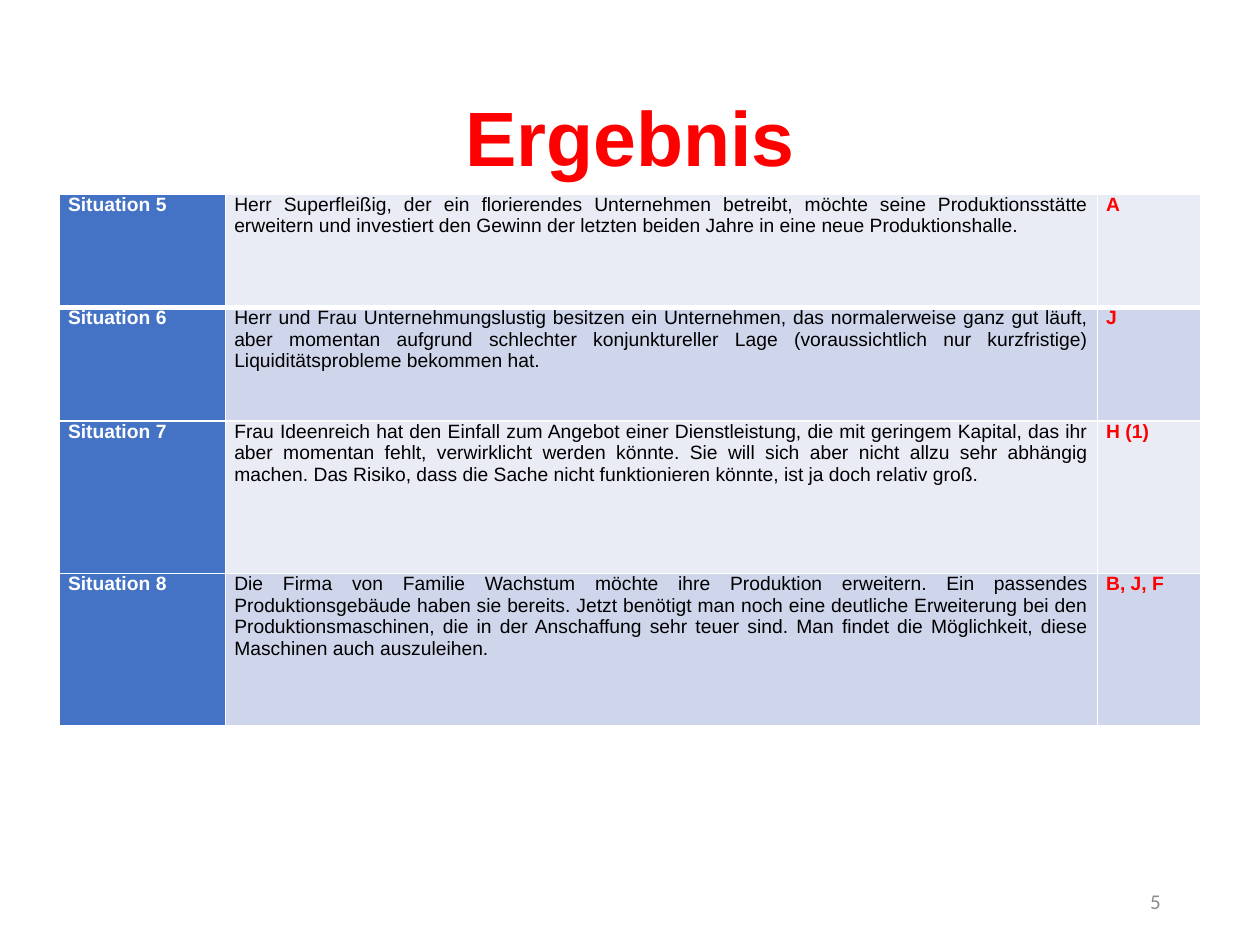
from pptx import Presentation
from pptx.dml.color import RGBColor
from pptx.enum.text import MSO_ANCHOR, PP_ALIGN
from pptx.oxml.ns import qn
from pptx.util import Inches, Pt
from lxml.etree import SubElement

RED = RGBColor(0xFF, 0x00, 0x00)
BLACK = RGBColor(0x00, 0x00, 0x00)
WHITE = RGBColor(0xFF, 0xFF, 0xFF)
GRAY = RGBColor(0x8C, 0x8C, 0x8C)
BLUE = RGBColor(0x44, 0x72, 0xC4)
BANDS = [RGBColor(0xE9, 0xEB, 0xF5), RGBColor(0xCF, 0xD5, 0xEA)]

COLS = [1.32, 6.92, 0.82]
ROWS = [
    (0.9, "Situation 5",
     "Herr Superfleißig, der ein florierendes Unternehmen betreibt, möchte "
     "seine Produktionsstätte erweitern und investiert den Gewinn der letzten "
     "beiden Jahre in eine neue Produktionshalle.", "A"),
    (0.9, "Situation 6",
     "Herr und Frau Unternehmungslustig besitzen ein Unternehmen, das "
     "normalerweise ganz gut läuft, aber momentan aufgrund schlechter "
     "konjunktureller Lage (voraussichtlich nur kurzfristige) "
     "Liquiditätsprobleme bekommen hat.", "J"),
    (1.21, "Situation 7",
     "Frau Ideenreich hat den Einfall zum Angebot einer Dienstleistung, die "
     "mit geringem Kapital, das ihr aber momentan fehlt, verwirklicht werden "
     "könnte. Sie will sich aber nicht allzu sehr abhängig machen. Das Risiko, "
     "dass die Sache nicht funktionieren könnte, ist ja doch relativ groß.",
     "H (1)"),
    (1.21, "Situation 8",
     "Die Firma von Familie Wachstum möchte ihre Produktion erweitern. Ein "
     "passendes Produktionsgebäude haben sie bereits. Jetzt benötigt man noch "
     "eine deutliche Erweiterung bei den Produktionsmaschinen, die in der "
     "Anschaffung sehr teuer sind. Man findet die Möglichkeit, diese Maschinen "
     "auch auszuleihen.", "B, J, F"),
]


class Deck:
    """Holds the text styles and the current slide."""

    styles = {
        "title": {"name": "Arial", "size": Pt(44), "bold": True},
        "cell": {"name": "Arial", "size": Pt(11)},
        "page": {"name": "Calibri", "size": Pt(12)},
    }

    def __init__(self):
        self.prs = Presentation()
        self.prs.slide_width = Inches(10)
        self.prs.slide_height = Inches(7.5)
        self.slide = self.prs.slides.add_slide(self.prs.slide_layouts[5])

    def text(self, frame, words, style, color, align, **extra):
        frame.word_wrap = True
        para = frame.paragraphs[0]
        para.alignment = align
        run = para.add_run()
        run.text = words
        for key, value in {**self.styles[style], **extra}.items():
            setattr(run.font, key, value)
        run.font.color.rgb = color
        return para

    def title(self, words, *box):
        shape = self.slide.shapes.title
        shape.left, shape.top, shape.width, shape.height = map(Inches, box)
        frame = shape.text_frame
        frame.vertical_anchor = MSO_ANCHOR.MIDDLE
        para = self.text(frame, words, "title", RED, PP_ALIGN.CENTER)
        para.line_spacing = 0.9

    def page(self, words, *box):
        frame = self.slide.shapes.add_textbox(*map(Inches, box)).text_frame
        frame.vertical_anchor = MSO_ANCHOR.MIDDLE
        self.text(frame, words, "page", GRAY, PP_ALIGN.RIGHT)

    def border(self, cell, sides):
        props = cell._tc.get_or_add_tcPr()
        for side, width in sides.items():
            line = SubElement(props, qn("a:ln" + side), w=str(Pt(width)))
            fill = SubElement(line, qn("a:solidFill"))
            SubElement(fill, qn("a:srgbClr"), val=str(WHITE))

    def cell(self, cell, words, color, fill, bold, sides):
        margins = {"margin_left": 0.07, "margin_right": 0.07,
                   "margin_top": 0, "margin_bottom": 0}
        for key, value in margins.items():
            setattr(cell, key, Inches(value))
        self.border(cell, sides)
        cell.fill.solid()
        cell.fill.fore_color.rgb = fill
        para = self.text(cell.text_frame, words, "cell", color,
                         PP_ALIGN.JUSTIFY, bold=bold)
        para.space_after = Pt(8)

    def table(self, rows, cols, left, top):
        high = sum(row[0] for row in rows)
        grid = self.slide.shapes.add_table(
            len(rows), len(cols), Inches(left), Inches(top),
            Inches(sum(cols)), Inches(high)).table
        for col, width in zip(grid.columns, cols):
            col.width = Inches(width)
        for i, (height, *texts) in enumerate(rows):
            grid.rows[i].height = Inches(height)
            band = BANDS[i % 2]
            looks = [(WHITE, BLUE, True), (BLACK, band, False),
                     (RED, band, True)]
            # A thick rule parts the first row from the rest
            sides = {"L": 1, "R": 1, "T": 3 if i == 1 else 1,
                     "B": 3 if i == 0 else 1}
            for j, (words, look) in enumerate(zip(texts, looks)):
                self.cell(grid.cell(i, j), words, *look, sides)


def main():
    deck = Deck()
    # Heading
    deck.title("Ergebnis", 0.69, 0.4, 8.62, 1.45)
    # Results
    deck.table(ROWS, COLS, 0.47, 1.54)
    # Page number
    deck.page("5", 7.06, 6.95, 2.25, 0.4)
    deck.prs.save("out.pptx")


if __name__ == "__main__":
    main()
